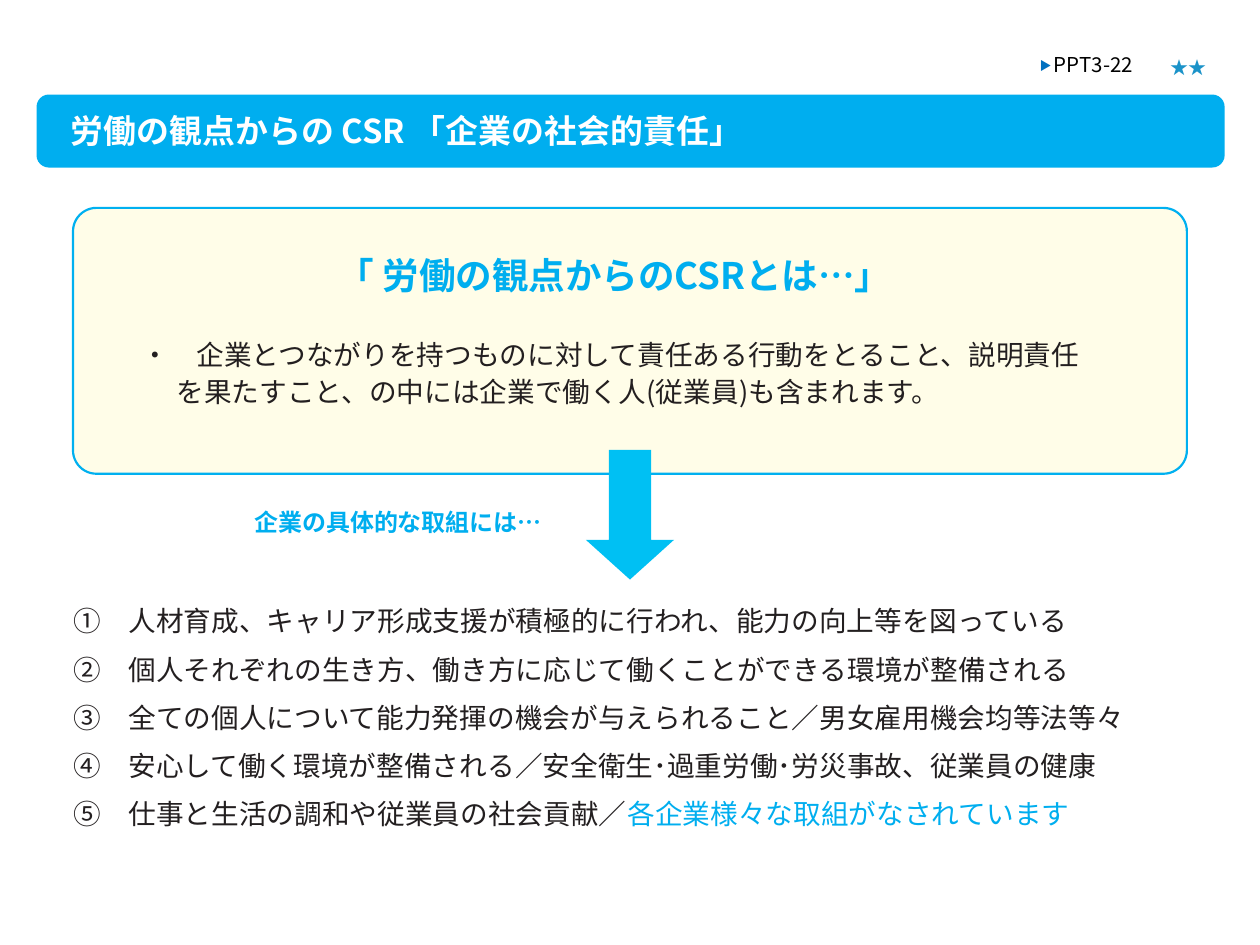
from pptx import Presentation
from pptx.dml.color import RGBColor
from pptx.enum.shapes import MSO_SHAPE
from pptx.oxml.ns import qn
from pptx.util import Inches, Pt
from lxml.etree import SubElement

FONT = "Noto Sans CJK JP"
CYAN, DARK, WHITE, BLACK = "00AEEF", "231F20", "FFFFFF", "000000"

# kind, left, top, width, height, fill, line, adjustments
SHAPES = [
    (MSO_SHAPE.ROUNDED_RECTANGLE, 0.58, 1.65, 8.84, 2.11, "FFFDE8", "00B0F0", [0.088]),
    (MSO_SHAPE.ROUNDED_RECTANGLE, 0.29, 0.75, 9.43, 0.58, CYAN, None, [0.17]),
    (MSO_SHAPE.DOWN_ARROW, 4.65, 3.57, 0.7, 1.03, "00C0F3", None, [0.48, 0.45]),
]

TITLE = "労働の観点からの CSR 「企業の社会的責任」"
HEADING = "「 労働の観点からのCSRとは…」"
DEFINITION = ("・　企業とつながりを持つものに対して責任ある行動をとること、説明責任を"
              "果たすこと、の中には企業で働く人(従業員)も含まれます。")
LEAD = "企業の具体的な取組には…"
EFFORTS = [
    [("①　人材育成、キャリア形成支援が積極的に行われ、能力の向上等を図っている", DARK)],
    [("②　個人それぞれの生き方、働き方に応じて働くことができる環境が整備される", DARK)],
    [("③　全ての個人について能力発揮の機会が与えられること／男女雇用機会均等法等々", DARK)],
    [("④　安心して働く環境が整備される／安全衛生･過重労働･労災事故、従業員の健康", DARK)],
    [("⑤　仕事と生活の調和や従業員の社会貢献／", DARK),
     ("各企業様々な取組がなされています", CYAN)],
]


def rgb(color):
    return RGBColor.from_string(color)


def add_shape(slide, kind, left, top, width, height, fill, line, adjustments):
    s = slide.shapes.add_shape(kind, *map(Inches, (left, top, width, height)))
    s.shadow.inherit = False
    for i, value in enumerate(adjustments):
        s.adjustments[i] = value
    s.fill.solid()
    s.fill.fore_color.rgb = rgb(fill)
    if line:
        s.line.color.rgb = rgb(line)
        s.line.width = Pt(1.25)
    else:
        s.line.fill.background()


def para(runs, size, bold=False, before=0, left=0.01, hang=0, spacing=None):
    return dict(runs=runs, size=size, bold=bold, before=before,
                left=left, hang=hang, spacing=spacing)


def add_text(slide, left, top, width, height, paragraphs):
    """Add a text box and return its text frame."""
    tf = slide.shapes.add_textbox(*map(Inches, (left, top, width, height))).text_frame
    tf.word_wrap = True
    tf.margin_left = tf.margin_right = tf.margin_bottom = 0
    tf.margin_top = Inches(0.02)
    for i, item in enumerate(paragraphs):
        p = tf.add_paragraph() if i else tf.paragraphs[0]
        p.space_before = Pt(item["before"])
        if item["spacing"]:
            p.line_spacing = item["spacing"]
        pPr = p._p.get_or_add_pPr()
        pPr.set("marL", str(Inches(item["left"])))
        pPr.set("indent", str(Inches(item["hang"])))
        for text, color in item["runs"]:
            r = p.add_run()
            r.text = text
            r.font.size = Pt(item["size"])
            r.font.bold = item["bold"]
            r.font.name = FONT
            r.font.color.rgb = rgb(color)
            SubElement(r.font._element, qn("a:ea")).set("typeface", FONT)
    return tf


def main():
    prs = Presentation()
    prs.slide_width, prs.slide_height = Inches(10), Inches(7.5)
    slide = prs.slides.add_slide(prs.slide_layouts[6])

    for shape in SHAPES:
        add_shape(slide, *shape)

    add_text(slide, 0.55, 0.86, 6.98, 0.33,
             [para([(TITLE, WHITE)], 18.8, bold=True, before=1.1)])
    add_text(slide, 1.1, 1.99, 7.69, 1.22, [
        para([(HEADING, CYAN)], 20.9, bold=True, before=1.1, left=1.58),
        para([(DEFINITION, DARK)], 15.8, before=20.8, left=0.3, hang=-0.28, spacing=1.12),
    ])
    add_text(slide, 0.57, 4.01, 8.85, 2.56, [
        para([(LEAD, CYAN)], 13.7, bold=True, before=0.9, left=1.45),
        *(para(runs, 15.8, before=8.6 if i else 38.7) for i, runs in enumerate(EFFORTS)),
    ])
    tf = add_text(slide, 8.24, 0.39, 0.99, 0.21,
                  [para([("▶ ", "0070C0"), ("PPT3-22", BLACK)], 11.7, before=1)])
    tf.paragraphs[0].runs[0].font._element.set("baseline", "9000")
    add_text(slide, 9.28, 0.43, 0.48, 0.21, [para([("★★", "1B93C9")], 10.3)])

    prs.save("out.pptx")


if __name__ == "__main__":
    main()
